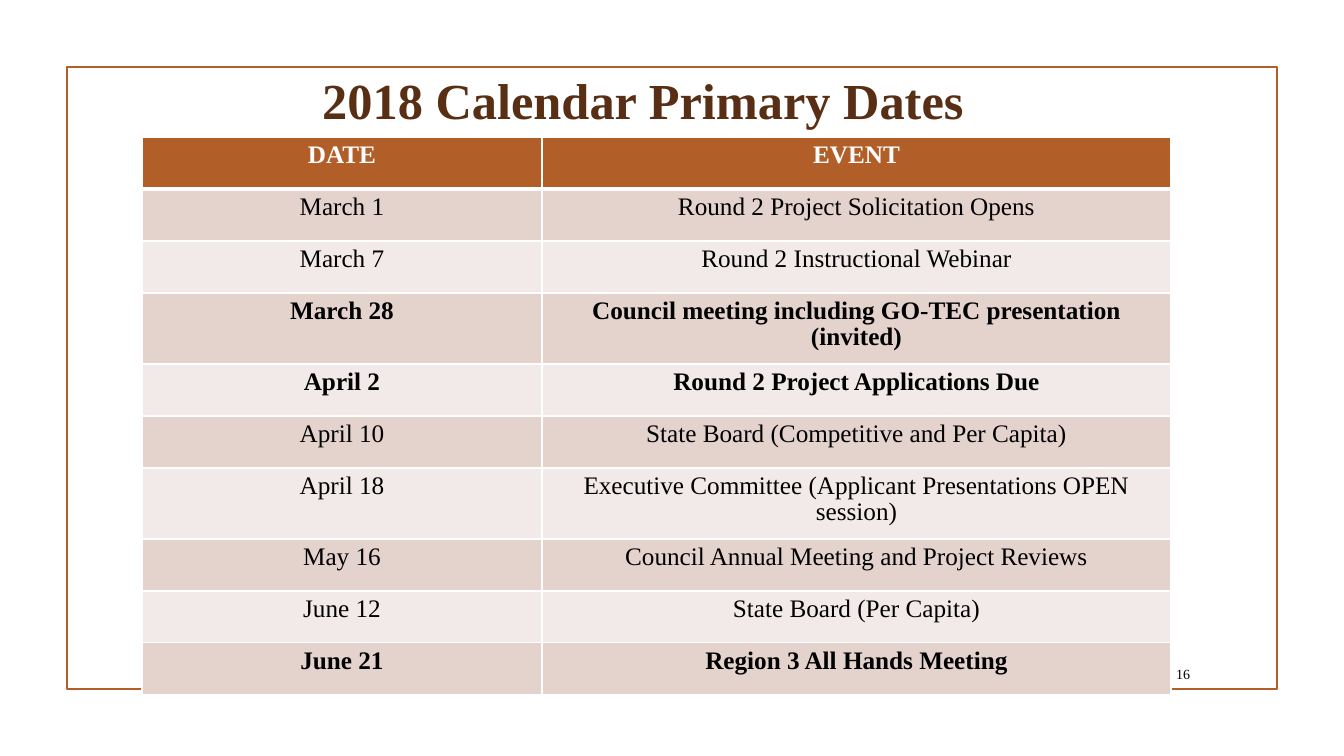
from lxml import etree
from pptx import Presentation
from pptx.dml.color import RGBColor
from pptx.enum.shapes import MSO_SHAPE
from pptx.enum.text import MSO_ANCHOR, PP_ALIGN
from pptx.oxml.ns import qn
from pptx.util import Emu, Pt

RECTANGLE = MSO_SHAPE.RECTANGLE
TOP, MIDDLE = MSO_ANCHOR.TOP, MSO_ANCHOR.MIDDLE
CENTER, RIGHT = PP_ALIGN.CENTER, PP_ALIGN.RIGHT

PX = 914400 / 100.8
COLORS = {
    "rust": "B15E28", "brown": "582F14", "black": "000000", "white": "FFFFFF",
    "band_dark": "E4D2CD", "band_light": "F2EAE8",
}
FONT = "Times New Roman"

# date, event, bold
EVENTS = [
    ("March 1", "Round 2 Project Solicitation Opens", False),
    ("March 7", "Round 2 Instructional Webinar", False),
    ("March 28", "Council meeting including GO-TEC presentation (invited)", True),
    ("April 2", "Round 2 Project Applications Due", True),
    ("April 10", "State Board (Competitive and Per Capita)", False),
    ("April 18", "Executive Committee (Applicant Presentations OPEN session)", False),
    ("May 16", "Council Annual Meeting and Project Reviews", False),
    ("June 12", "State Board (Per Capita)", False),
    ("June 21", "Region 3 All Hands Meeting", True),
]
COLUMN_WIDTHS = [400, 629]
ROW_HEIGHT, TALL_ROW_HEIGHT = 52, 71
TALL_ROWS = (3, 6)


def px(*lengths):
    return [Emu(round(length * PX)) for length in lengths]


def write(frame, text, size, color, bold, alignment):
    para = frame.paragraphs[0]
    para.alignment = alignment
    span = para.add_run()
    span.text = text
    for name, value in {"name": FONT, "size": Pt(size), "bold": bold}.items():
        setattr(span.font, name, value)
    span.font.color.rgb = RGBColor.from_string(COLORS[color])
    return para


deck = Presentation()
deck.slide_width, deck.slide_height = px(1344, 756)
slide = deck.slides.add_slide(deck.slide_layouts[6])

# Frame
frame = slide.shapes.add_shape(RECTANGLE, *px(67, 67, 1210, 622))
frame.shadow.inherit = False
frame.fill.background()
frame.line.color.rgb = RGBColor.from_string(COLORS["rust"])
frame.line.width = Pt(1.25)

# Title and page number
for text, area, anchor, top_inset, style in [
    ("2018 Calendar Primary Dates", (115, 59, 1056, 132), TOP, 10,
     (36, "brown", True, CENTER)),
    ("16", (1141, 658, 59, 31), MIDDLE, 5, (10, "black", False, RIGHT)),
]:
    box = slide.shapes.add_textbox(*px(*area))
    box.text_frame.word_wrap = True
    box.text_frame.vertical_anchor = anchor
    box.text_frame.margin_top = px(top_inset)[0]
    write(box.text_frame, text, *style)

# Calendar table
rows = [("DATE", "EVENT", True)] + EVENTS
heights = [TALL_ROW_HEIGHT if index in TALL_ROWS else ROW_HEIGHT
           for index in range(len(rows))]
table = slide.shapes.add_table(
    len(rows), len(COLUMN_WIDTHS),
    *px(142, 137, sum(COLUMN_WIDTHS), sum(heights))).table
for column, width in zip(table.columns, px(*COLUMN_WIDTHS)):
    column.width = width

for row_index, (date, event, bold) in enumerate(rows):
    table.rows[row_index].height = px(heights[row_index])[0]
    is_header = row_index == 0
    band = "rust" if is_header else ("band_light", "band_dark")[row_index % 2]
    border_widths = {
        "a:lnL": 1, "a:lnR": 1,
        "a:lnT": 3 if row_index == 1 else 1,
        "a:lnB": 3 if is_header else 1,
    }
    for column_index, text in enumerate((date, event)):
        cell = table.cell(row_index, column_index)
        para = write(cell.text_frame, text, 18,
                     "white" if is_header else "black", bold, CENTER)
        para.line_spacing = 0.95
        properties = cell._tc.get_or_add_tcPr()
        for tag, width in border_widths.items():
            border = etree.SubElement(properties, qn(tag), w=str(Pt(width)))
            fill = etree.SubElement(border, qn("a:solidFill"))
            etree.SubElement(fill, qn("a:srgbClr"), val=COLORS["white"])
        cell.fill.solid()
        cell.fill.fore_color.rgb = RGBColor.from_string(COLORS[band])

deck.save("out.pptx")
